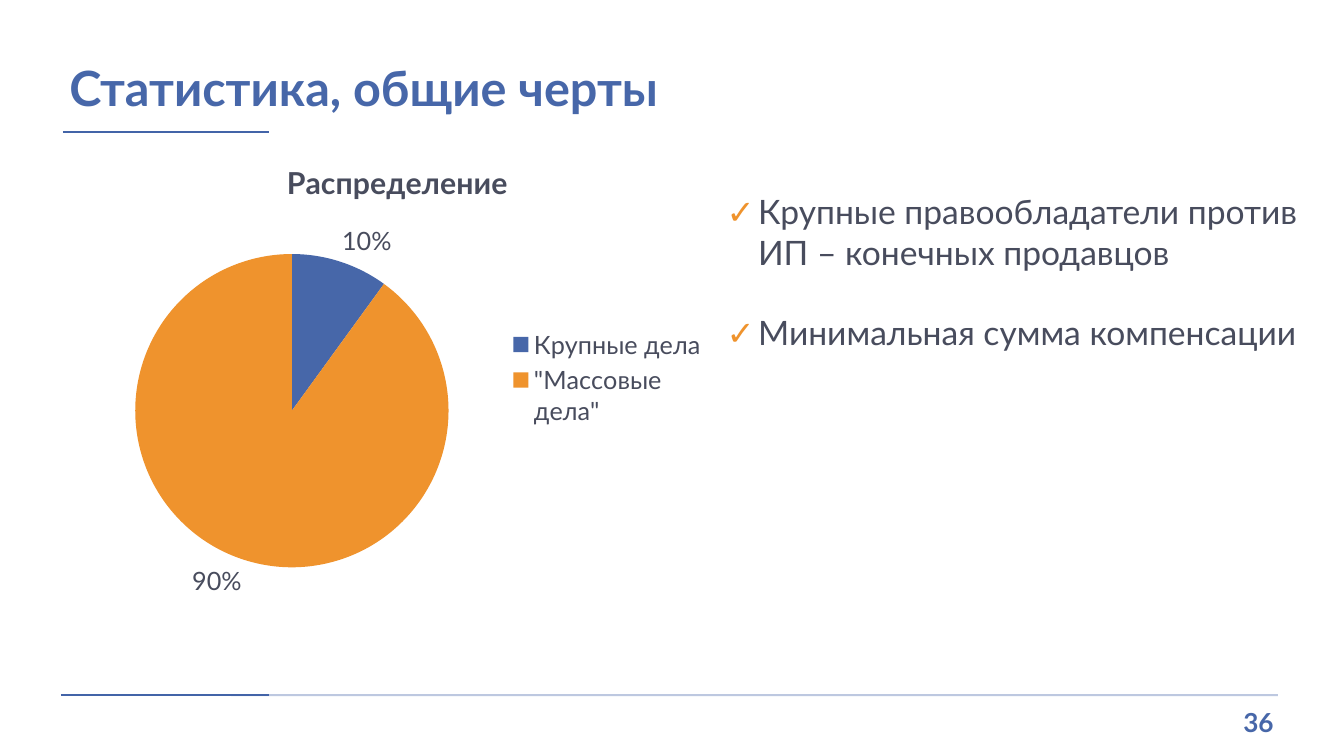
from dataclasses import dataclass

from lxml import etree
from pptx import Presentation
from pptx import util as u
from pptx.chart import data as chart_data
from pptx.dml.color import RGBColor
from pptx.enum import chart as charts, shapes, text
from pptx.oxml import ns

PX = 9525


@dataclass(frozen=True)
class Theme:
    font: str = "Lato"
    heading: str = "4767A9"
    rule: str = "4364A8"
    ink: str = "484C5D"
    accent: str = "EF932D"
    title_size: float = 34.7
    number_size: float = 18.7
    list_size: float = 24
    chart_title_size: float = 21.6
    chart_size: float = 18
    rule_width: float = 1.5


THEME = Theme()


def px(*lengths):
    return [u.Emu(length * PX) for length in lengths]


def set_all(target, values):
    for name, value in values.items():
        setattr(target, name, value)


def format_font(font, size, color, bold=False):
    set_all(font, {"name": THEME.font, "size": u.Pt(size), "bold": bold})
    font.color.rgb = RGBColor.from_string(color)


def add_element(parent, tag, **attributes):
    return etree.SubElement(parent, ns.qn(tag), attributes)


def add_rule(slide, left, right, y, opacity=100):
    rule = slide.shapes.add_connector(
        shapes.MSO_CONNECTOR.STRAIGHT, *px(left, y, right, y))
    rule.line.color.rgb = RGBColor.from_string(THEME.rule)
    rule.line.width = u.Pt(THEME.rule_width)
    if opacity < 100:
        color = rule.line._ln.find(".//" + ns.qn("a:srgbClr"))
        add_element(color, "a:alpha", val=str(opacity * 1000))
    add_element(rule._element.spPr, "a:effectLst")


def add_text_frame(slide, box, anchor=text.MSO_ANCHOR.TOP):
    frame = slide.shapes.add_textbox(*px(*box)).text_frame
    set_all(frame, {"word_wrap": True, "vertical_anchor": anchor,
                    "margin_left": px(7)[0], "margin_right": px(7)[0],
                    "margin_top": px(4)[0], "margin_bottom": px(4)[0]})
    return frame


def add_title(slide, box, wording):
    left, top, width, height = box
    frame = add_text_frame(slide, box, text.MSO_ANCHOR.BOTTOM)
    paragraph = frame.paragraphs[0]
    paragraph.text = wording
    format_font(paragraph.font, THEME.title_size, THEME.heading, True)
    add_rule(slide, left + 1, left + 197, top + height + 11)


def add_footer(slide, box, number):
    left, top, width, height = box
    add_rule(slide, left + 162, left + width, top, 35)
    add_rule(slide, left, left + 198, top)
    frame = add_text_frame(
        slide, (left + width - 69, top + 7, 72, height - 7))
    paragraph = frame.paragraphs[0]
    set_all(paragraph, {"text": number, "alignment": text.PP_ALIGN.RIGHT})
    format_font(paragraph.font, THEME.number_size, THEME.heading, True)


def add_pie(slide, box, title, shares):
    data = chart_data.CategoryChartData()
    data.categories = list(shares)
    data.add_series(title, list(shares.values()))
    chart = slide.shapes.add_chart(
        charts.XL_CHART_TYPE.PIE, *px(*box), data).chart
    format_font(chart.font, THEME.chart_size, THEME.ink)

    chart.has_title = True
    paragraph = chart.chart_title.text_frame.paragraphs[0]
    paragraph.text = title
    format_font(paragraph.runs[0].font, THEME.chart_title_size, THEME.ink, True)
    chart.chart_title.include_in_layout = False

    chart.has_legend = True
    set_all(chart.legend, {"position": charts.XL_LEGEND_POSITION.RIGHT,
                           "include_in_layout": False})
    format_font(chart.legend.font, THEME.chart_size, THEME.ink)

    plot = chart.plots[0]
    plot.vary_by_categories = True
    for index, color in enumerate((THEME.heading, THEME.accent)):
        fill = plot.series[0].points[index].format.fill
        fill.solid()
        fill.fore_color.rgb = RGBColor.from_string(color)
    plot.has_data_labels = True
    set_all(plot.data_labels, {
        "show_percentage": True, "show_value": False,
        "number_format": "0%", "number_format_is_linked": False,
        "position": charts.XL_LABEL_POSITION.OUTSIDE_END})
    format_font(plot.data_labels.font, THEME.chart_size, THEME.ink)

    plot_area = chart._chartSpace.chart.plotArea
    for layout in plot_area.findall(ns.qn("c:layout")):
        plot_area.remove(layout)
    layout = etree.Element(ns.qn("c:layout"))
    plot_area.insert(0, layout)
    manual = add_element(layout, "c:manualLayout")
    for name, value in {"layoutTarget": "inner", "xMode": "edge",
                        "yMode": "edge", "x": 0.09, "y": 0.24,
                        "w": 0.49, "h": 0.66}.items():
        add_element(manual, "c:" + name, val=str(value))


def add_check_list(slide, box, items):
    frame = add_text_frame(slide, box)
    indent = px(30)[0]
    for index, item in enumerate(items):
        paragraph = frame.add_paragraph() if index else frame.paragraphs[0]
        paragraph.text = item
        if index:
            paragraph.space_before = u.Pt(THEME.list_size * 1.2)
        properties = paragraph._p.get_or_add_pPr()
        properties.set("marL", str(indent))
        properties.set("indent", str(-indent))
        bullet_color = add_element(properties, "a:buClr")
        add_element(bullet_color, "a:srgbClr", val=THEME.accent)
        add_element(properties, "a:buFont", typeface=THEME.font)
        add_element(properties, "a:buChar", char="✓")
        format_font(paragraph.font, THEME.list_size, THEME.ink)


def main():
    presentation = Presentation()
    set_all(presentation, dict(zip(("slide_width", "slide_height"),
                                   px(1280, 720))))
    slide = presentation.slides.add_slide(presentation.slide_layouts[6])
    add_footer(slide, (58, 662, 1159, 44), "36")
    add_title(slide, (59, 23, 1125, 92), "Статистика, общие черты")
    add_pie(slide, (74, 133, 609, 453), "Распределение",
            {"Крупные дела": 10, "\"Массовые дела\"": 90})
    add_check_list(slide, (685, 178, 566, 204), [
        "Крупные правообладатели против ИП – конечных продавцов",
        "Минимальная сумма компенсации"])
    presentation.save("out.pptx")


if __name__ == "__main__":
    main()
